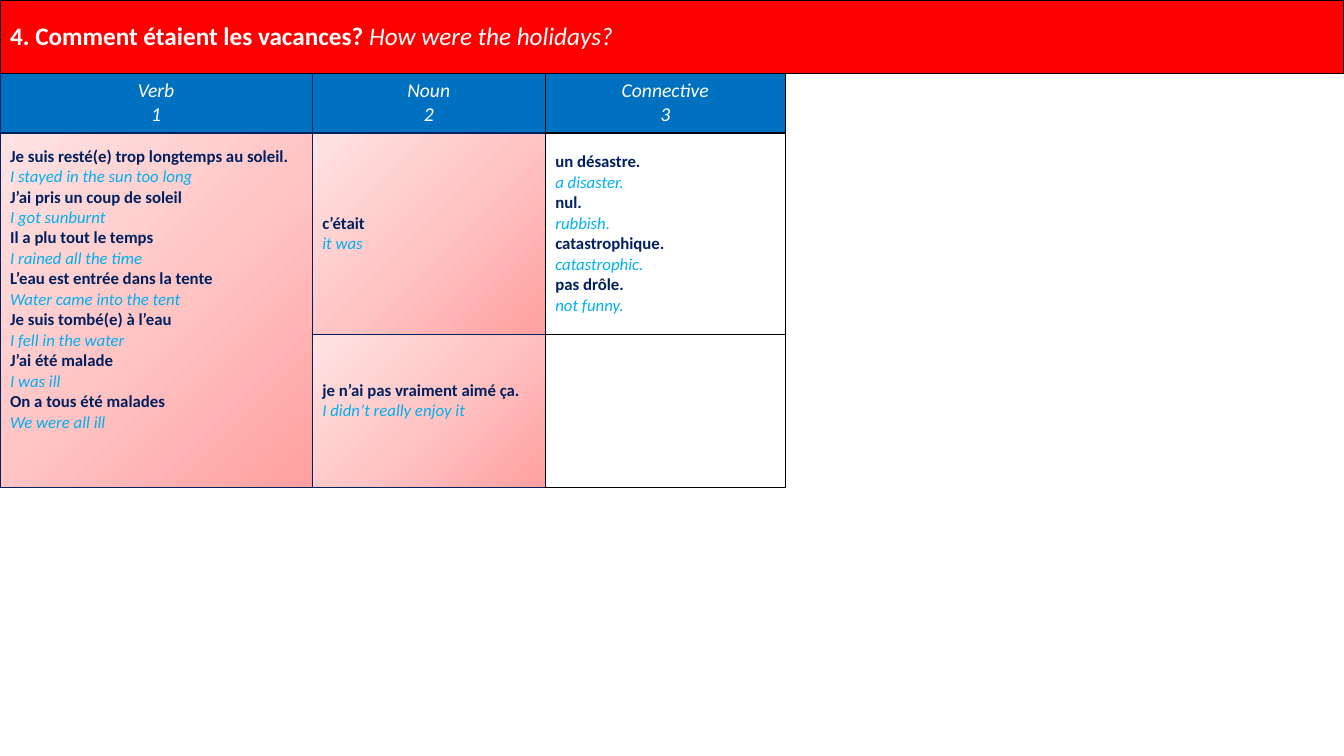
from lxml import etree
from pptx import Presentation
from pptx.dml.color import RGBColor
from pptx.enum.text import MSO_ANCHOR as Anchor, PP_ALIGN as Align
from pptx.oxml.ns import qn
from pptx.util import Cm, Pt

WHITE, BLACK, NAVY, SKY = "FFFFFF", "000000", "002060", "00B0F0"
RED, BLUE = "FF0000", "0070C0"
ROSE = [(0, "FFA0A0"), (50, "FFC5C5"), (100, "FFE3E3")]
SIDES = "LRTB"
COLS = [7.87, 5.87, 6.05, 14.08]
ROWS = [1.85, 1.5, 5.08, 3.85]
LINE = 0.52  # height of one 12 pt line, in cm

HEADS = [("Verb", "1"), ("Noun", "2"), ("Connective", "3")]
VERBS = [
    ("Je suis resté(e) trop longtemps au soleil.", "I stayed in the sun too long"),
    ("J’ai pris un coup de soleil", "I got sunburnt"),
    ("Il a plu tout le temps", "I rained all the time"),
    ("L’eau est entrée dans la tente", "Water came into the tent"),
    ("Je suis tombé(e) à l’eau", "I fell in the water"),
    ("J’ai été malade", "I was ill"),
    ("On a tous été malades", "We were all ill"),
]
WAS = [("c’était", "it was")]
ENDS = [
    ("un désastre.", "a disaster."),
    ("nul.", "rubbish."),
    ("catastrophique.", "catastrophic."),
    ("pas drôle.", "not funny."),
]
ENJOY = [("je n’ai pas vraiment aimé ça.", "I didn’t really enjoy it")]


def color(code):
    return RGBColor.from_string(code)


def add(parent, tag, **attrs):
    return etree.SubElement(parent, qn(tag), {k: str(v) for k, v in attrs.items()})


class Sheet:
    font = "Calibri"

    def __init__(self, deck):
        self.slide = deck.slides.add_slide(deck.slide_layouts[6])

    def grid(self, cols, rows):
        frame = self.slide.shapes.add_table(
            len(rows), len(cols), 0, 0, Cm(sum(cols)), Cm(sum(rows)))
        self.table = frame.table
        self.table.first_row = self.table.horz_banding = False
        for col, width in zip(self.table.columns, cols):
            col.width = Cm(width)
        for row, height in zip(self.table.rows, rows):
            row.height = Cm(height)

    def edges(self, cell, lines):
        """Draw the sides named in lines (side: colour) and clear the others."""
        props = cell._tc.get_or_add_tcPr()
        for side in SIDES:
            line = add(props, f"a:ln{side}", w=Pt(1))
            if side in lines:
                add(add(line, "a:solidFill"), "a:srgbClr", val=lines[side])
            else:
                add(line, "a:noFill")

    def paint(self, cell, fill):
        """Fill with one colour, a list of gradient stops, or nothing."""
        if fill is None:
            cell.fill.background()
        elif isinstance(fill, str):
            cell.fill.solid()
            cell.fill.fore_color.rgb = color(fill)
        else:
            grad = add(cell._tc.get_or_add_tcPr(), "a:gradFill", rotWithShape=1)
            stops = add(grad, "a:gsLst")
            for spot, code in fill:
                add(add(stops, "a:gs", pos=spot * 1000), "a:srgbClr", val=code)
            add(add(grad, "a:path", path="circle"), "a:fillToRect", l=100000, t=100000)

    def cell(self, row, col, fill, lines):
        cell = self.table.cell(row, col)
        cell.vertical_anchor = Anchor.MIDDLE
        self.edges(cell, lines)
        self.paint(cell, fill)
        return cell

    def style(self, run, size, code, bold=False, italic=False):
        font = run.font
        font.name, font.size, font.color.rgb = self.font, Pt(size), color(code)
        font.bold, font.italic = bold, italic

    def title(self, cell, french, english):
        cell.text_frame.text = french
        para = cell.text_frame.paragraphs[0]
        para.add_run().text = english
        first, last = para.runs
        self.style(first, 18, WHITE, bold=True)
        self.style(last, 18, WHITE, italic=True)

    def head(self, cell, words):
        cell.text_frame.text = "\n".join(words)
        for para in cell.text_frame.paragraphs:
            para.alignment = Align.CENTER
            self.style(para.runs[0], 14, WHITE, italic=True)

    def pairs(self, cell, pairs, lift=0):
        """French in bold over English in italics, lifted by blank line heights."""
        cell.text_frame.text = "\n".join(text for pair in pairs for text in pair)
        cell.margin_bottom = Cm(0.13 + lift * LINE)
        for i, para in enumerate(cell.text_frame.paragraphs):
            french = i % 2 == 0
            self.style(para.runs[0], 12, NAVY if french else SKY, french, not french)


def main():
    deck = Presentation()
    deck.slide_width, deck.slide_height = Cm(33.87), Cm(19.05)
    sheet = Sheet(deck)
    sheet.grid(COLS, ROWS)

    black, navy = dict.fromkeys(SIDES, BLACK), dict.fromkeys(SIDES, NAVY)
    noun = {**navy, "R": BLACK}
    tops = [{**navy, "T": BLACK}, {**noun, "T": BLACK}, black]

    for col in range(len(COLS)):
        banner = sheet.cell(0, col, RED, black)
        if col == 0:
            sheet.title(banner, "4. Comment étaient les vacances? ",
                        "How were the holidays?")
    for col, (words, lines) in enumerate(zip(HEADS, tops)):
        sheet.head(sheet.cell(1, col, BLUE, lines), words)

    sheet.pairs(sheet.cell(2, 0, ROSE, navy), VERBS, lift=2)
    sheet.cell(3, 0, ROSE, navy)
    sheet.pairs(sheet.cell(2, 1, ROSE, noun), WAS)
    sheet.pairs(sheet.cell(3, 1, ROSE, noun), ENJOY, lift=1)
    sheet.pairs(sheet.cell(2, 2, None, black), ENDS)
    sheet.cell(3, 2, None, black)
    sheet.cell(1, 3, WHITE, {"L": BLACK, "T": BLACK})
    for row in (2, 3):
        sheet.cell(row, 3, WHITE, {"L": BLACK})

    for start, end in [((0, 0), (0, 3)), ((1, 3), (3, 3)), ((2, 0), (3, 0))]:
        sheet.table.cell(*start).merge(sheet.table.cell(*end))
    deck.save("out.pptx")


if __name__ == "__main__":
    main()
